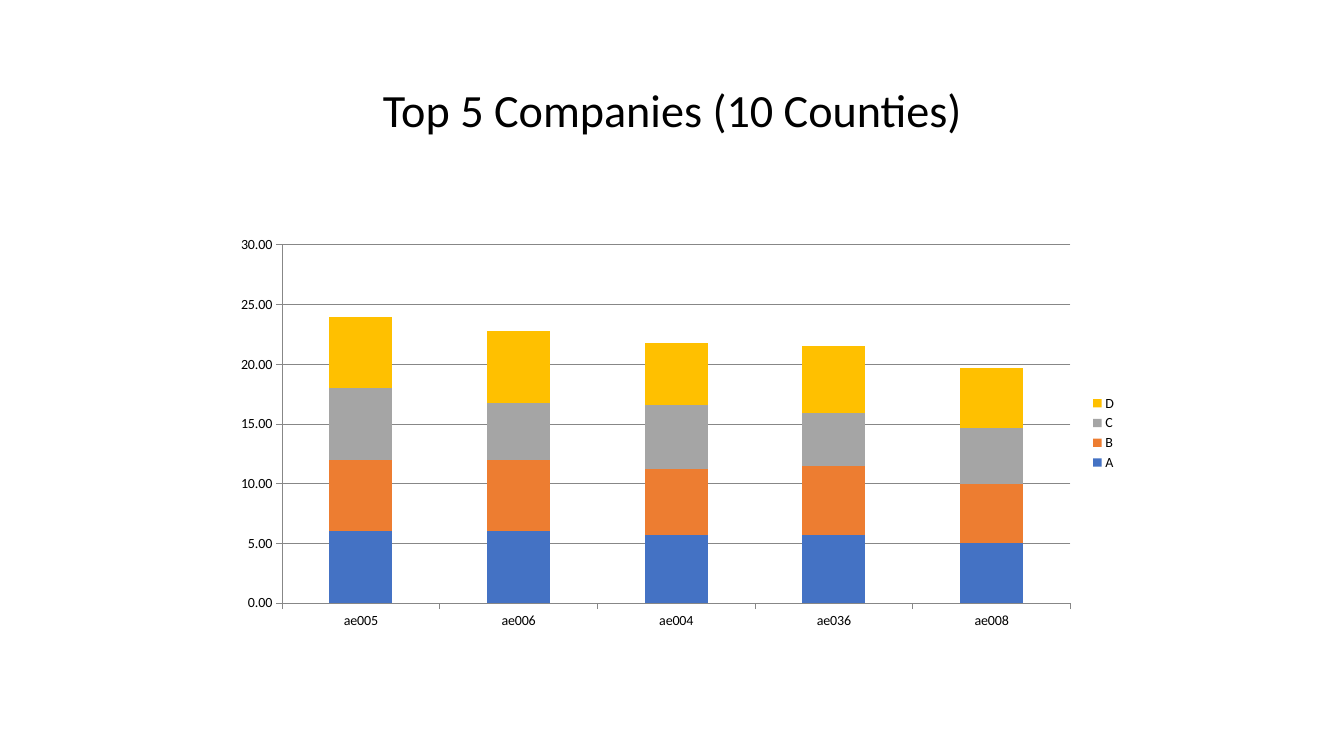
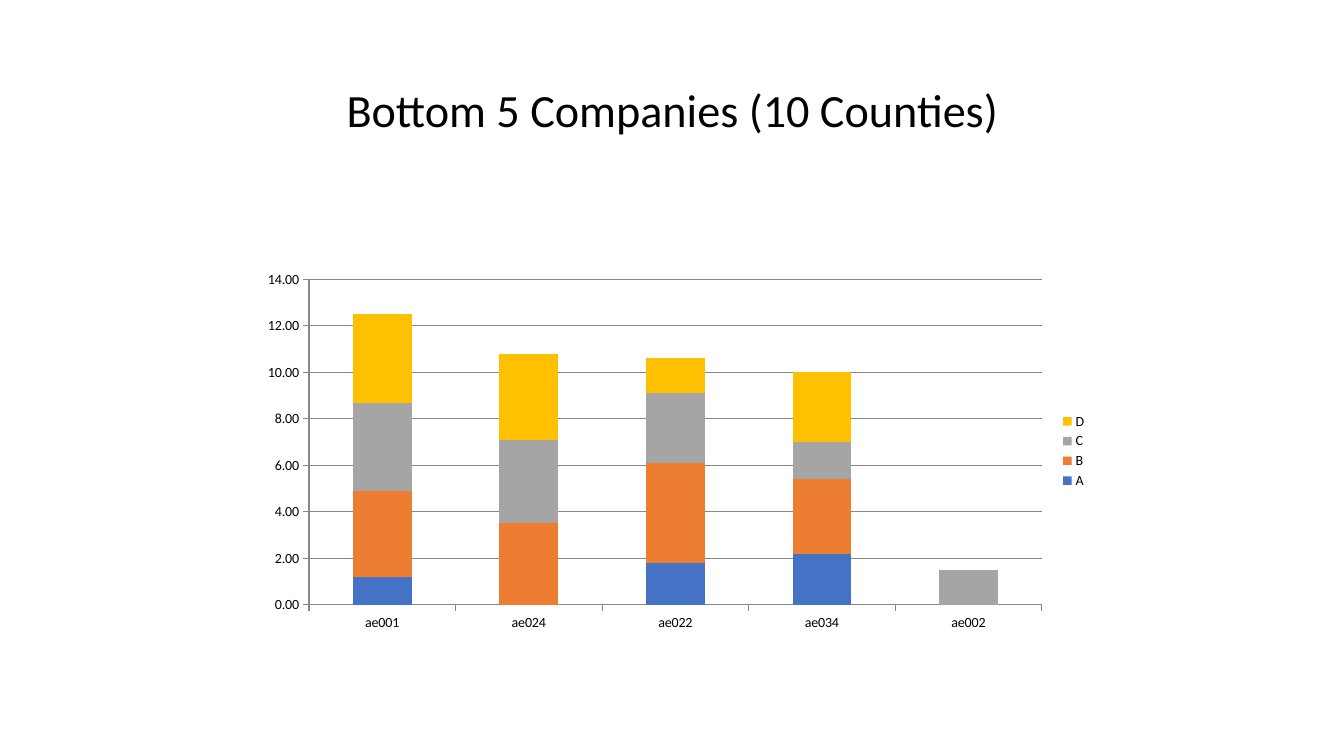
from pptx import Presentation
from pptx.chart.data import CategoryChartData
from pptx.dml.color import RGBColor
from pptx.enum.chart import XL_CHART_TYPE, XL_LEGEND_POSITION, XL_TICK_MARK
from pptx.enum.text import MSO_ANCHOR, MSO_AUTO_SIZE, PP_ALIGN
from pptx.util import Emu, Pt

STACKED = XL_CHART_TYPE.COLUMN_STACKED
LEGEND_RIGHT = XL_LEGEND_POSITION.RIGHT
TICK_OUTSIDE = XL_TICK_MARK.OUTSIDE
TICK_NONE = XL_TICK_MARK.NONE
MIDDLE = MSO_ANCHOR.MIDDLE
NO_AUTOFIT = MSO_AUTO_SIZE.NONE
CENTER = PP_ALIGN.CENTER

EMU_PER_PX = 914400 / 100.8
PAGE_SIZE = (1344, 756)
TITLE_BOX = (93, 40, 1159, 146)
TITLE_ONLY_LAYOUT = 5

BLACK = "000000"
AXIS_GRAY = "878787"
SERIES_COLORS = {"A": "4472C4", "B": "ED7D31", "C": "A5A5A5", "D": "FFC000"}
TITLE_FONT = {"name": "Calibri", "size": Pt(33), "bold": False}
CHART_FONT = {"name": "Calibri", "size": Pt(10), "bold": False}

PAGES = [
    {
        "title": "Top 5 Companies (10 Counties)",
        "box": (223, 229, 904, 408),
        "scale": (30, 5),
        "companies": ["ae005", "ae006", "ae004", "ae036", "ae008"],
        "scores": {
            "A": [6, 6, 5.7, 5.7, 5],
            "B": [6, 6, 5.5, 5.8, 5],
            "C": [6, 4.8, 5.4, 4.4, 4.7],
            "D": [6, 6, 5.2, 5.6, 5],
        },
    },
    {
        "title": "Bottom 5 Companies (10 Counties)",
        "box": (251, 264, 846, 374),
        "scale": (14, 2),
        "companies": ["ae001", "ae024", "ae022", "ae034", "ae002"],
        "scores": {
            "A": [1.2, 0, 1.8, 2.2, 0],
            "B": [3.7, 3.5, 4.3, 3.2, 0],
            "C": [3.8, 3.6, 3, 1.6, 1.5],
            "D": [3.8, 3.7, 1.5, 3, 0],
        },
    },
]


def px(length):
    return Emu(round(length * EMU_PER_PX))


def paint(color_format, hex_color):
    color_format.rgb = RGBColor.from_string(hex_color)


def apply_format(target, values):
    for name, value in values.items():
        setattr(target, name, value)


def style_font(font, values):
    apply_format(font, values)
    paint(font.color, BLACK)


def style_line(line):
    paint(line.color, AXIS_GRAY)
    line.width = Pt(0.75)


def place_title(page, text, box):
    title = page.shapes.title
    apply_format(title, dict(zip(("left", "top", "width", "height"), map(px, box))))
    frame = title.text_frame
    apply_format(frame, {"auto_size": NO_AUTOFIT, "vertical_anchor": MIDDLE,
                         "word_wrap": True})
    para = frame.paragraphs[0]
    apply_format(para, {"alignment": CENTER, "line_spacing": 0.9})
    span = para.add_run()
    span.text = text
    style_font(span.font, TITLE_FONT)


def style_axes(chart, scale):
    """Give both axes gray lines; scale is the top value and the step."""
    for axis in (chart.category_axis, chart.value_axis):
        apply_format(axis, {"major_tick_mark": TICK_OUTSIDE,
                            "minor_tick_mark": TICK_NONE})
        style_line(axis.format.line)
    maximum, step = scale
    values = chart.value_axis
    apply_format(values, {"minimum_scale": 0, "maximum_scale": maximum,
                          "major_unit": step, "has_major_gridlines": True})
    style_line(values.major_gridlines.format.line)
    apply_format(values.tick_labels, {"number_format": "0.00",
                                      "number_format_is_linked": False})


def place_score_chart(page, companies, scores, scale, box):
    chart_data = CategoryChartData()
    chart_data.categories = companies
    for name, values in scores.items():
        chart_data.add_series(name, values)
    chart = page.shapes.add_chart(STACKED, *map(px, box), chart_data).chart
    apply_format(chart, {"has_title": False, "has_legend": True})
    apply_format(chart.legend, {"position": LEGEND_RIGHT,
                                "include_in_layout": False})
    style_font(chart.font, CHART_FONT)
    style_axes(chart, scale)
    plot = chart.plots[0]
    apply_format(plot, {"gap_width": 150, "overlap": 100,
                        "vary_by_categories": False})
    for series in plot.series:
        series.format.fill.solid()
        paint(series.format.fill.fore_color, SERIES_COLORS[series.name])


def add_chart_page(deck, content):
    page = deck.slides.add_slide(deck.slide_layouts[TITLE_ONLY_LAYOUT])
    place_title(page, content["title"], TITLE_BOX)
    place_score_chart(page, content["companies"], content["scores"],
                      content["scale"], content["box"])


def main():
    deck = Presentation()
    deck.slide_width, deck.slide_height = map(px, PAGE_SIZE)
    for content in PAGES:
        add_chart_page(deck, content)
    deck.save("out.pptx")


if __name__ == "__main__":
    main()
